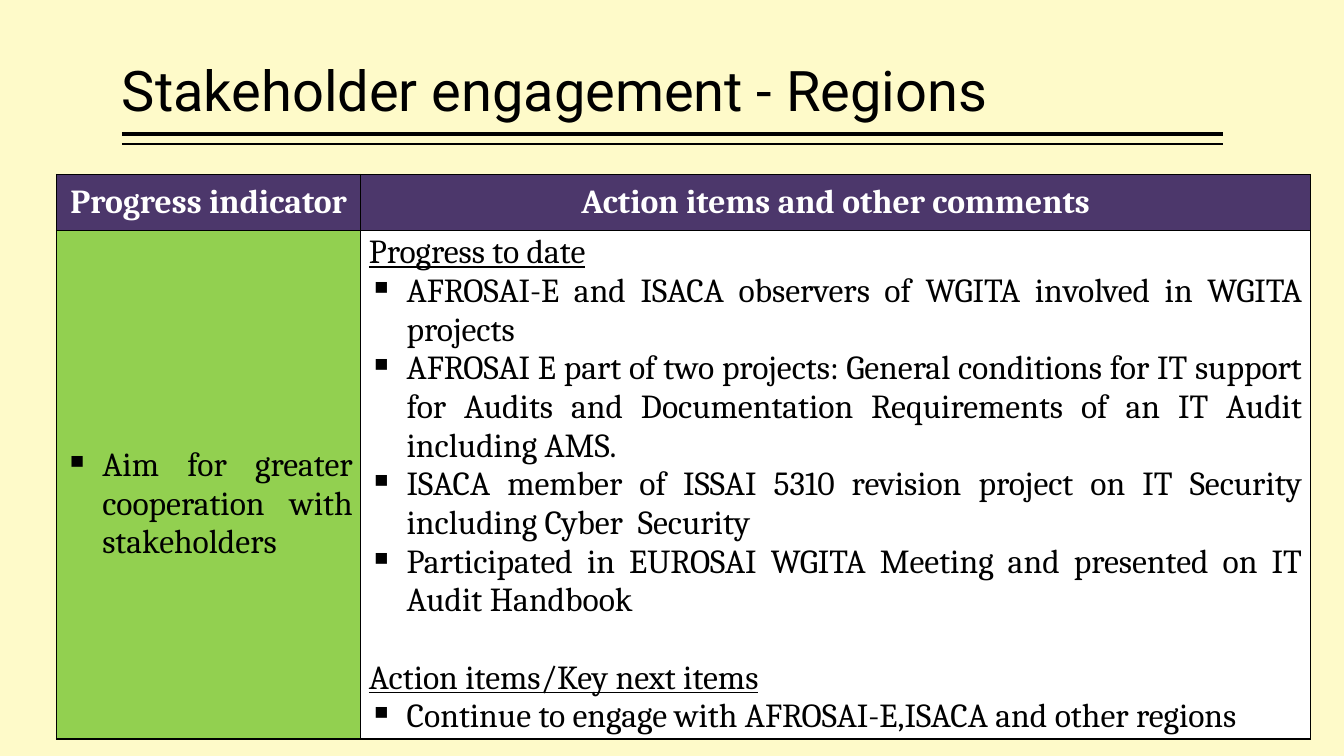
from dataclasses import dataclass
from typing import Any

from lxml import etree
from pptx import Presentation
from pptx.dml.color import RGBColor
from pptx.enum.shapes import MSO_CONNECTOR
from pptx.enum.text import MSO_ANCHOR, MSO_AUTO_SIZE, PP_ALIGN
from pptx.oxml.ns import qn
from pptx.util import Pt

STRAIGHT = MSO_CONNECTOR.STRAIGHT
MIDDLE, BOTTOM = MSO_ANCHOR.MIDDLE, MSO_ANCHOR.BOTTOM
NO_AUTOFIT = MSO_AUTO_SIZE.NONE
LEFT, CENTER, JUSTIFY = PP_ALIGN.LEFT, PP_ALIGN.CENTER, PP_ALIGN.JUSTIFY
TITLE_ONLY = 5


@dataclass(frozen=True)
class Theme:
    background: str = "FEFAC9"
    ink: str = "000000"
    header_ink: str = "FFFFFF"
    header_fill: str = "4C376B"
    indicator_fill: str = "92D050"
    comments_fill: str = "FFFFFF"
    title_font: str = "Roboto"
    table_font: str = "Cambria"
    title_size: float = 40
    table_size: float = 24
    line_height: float = 27.7
    bullet_indent: float = 27


THEME = Theme()


@dataclass(frozen=True)
class Rule:
    y: float
    weight: float


@dataclass(frozen=True)
class Entry:
    text: str
    align: Any = JUSTIFY
    bullet: bool = False
    bold: bool = False
    underline: bool = False
    space_before: float = 0


@dataclass(frozen=True)
class CellSpec:
    row: int
    column: int
    fill: str
    ink: str
    entries: list[Entry]
    top_margin: float = 0


def header(text: str) -> list[Entry]:
    return [Entry(text, align=CENTER, bold=True)]


def bullets(*texts: str) -> list[Entry]:
    return [Entry(text, bullet=True) for text in texts]


TITLE = "Stakeholder engagement - Regions"
RULE_LEFT, RULE_RIGHT = 87.1, 873.4
RULES = [Rule(95.8, 3), Rule(103, 1)]
TABLE_LEFT, TABLE_TOP = 40.3, 124.6
COLUMN_WIDTHS = [217.4, 678.2]
ROW_HEIGHTS = [40.3, 363]

PROGRESS = bullets(
    "AFROSAI-E and ISACA observers of WGITA involved in WGITA projects",
    "AFROSAI E part of two projects: General conditions for IT support for Audits "
    "and Documentation Requirements of an IT Audit including AMS.",
    "ISACA member of ISSAI 5310 revision project on IT Security including Cyber  Security",
    "Participated in EUROSAI WGITA Meeting and presented on IT Audit Handbook",
)
NEXT_ITEMS = bullets("Continue to engage with AFROSAI-E,ISACA and other regions")
COMMENTS = [
    Entry("Progress to date", underline=True),
    *PROGRESS,
    Entry("Action items/Key next items", underline=True, space_before=THEME.line_height),
    *NEXT_ITEMS,
]

CELLS = [
    CellSpec(0, 0, THEME.header_fill, THEME.header_ink, header("Progress indicator")),
    CellSpec(0, 1, THEME.header_fill, THEME.header_ink,
             header("Action items and other comments")),
    CellSpec(1, 0, THEME.indicator_fill, THEME.ink,
             bullets("Aim for greater cooperation with stakeholders"),
             top_margin=THEME.line_height),
    CellSpec(1, 1, THEME.comments_fill, THEME.ink, COMMENTS),
]


def apply(target: Any, values: dict[str, Any]) -> None:
    """Set each named attribute on the target."""
    for name, value in values.items():
        setattr(target, name, value)


def add_title(slide: Any) -> None:
    title = slide.shapes.title
    apply(title, {"left": Pt(87.1), "top": Pt(31), "width": Pt(661), "height": Pt(61.2)})
    frame = title.text_frame
    frame.text = TITLE
    apply(frame, {"margin_left": 0, "margin_right": 0, "margin_top": Pt(3.6),
                  "margin_bottom": Pt(3.6), "vertical_anchor": BOTTOM,
                  "word_wrap": True, "auto_size": NO_AUTOFIT})
    paragraph = frame.paragraphs[0]
    apply(paragraph, {"alignment": LEFT, "line_spacing": 0.9})
    font = paragraph.runs[0].font
    apply(font, {"name": THEME.title_font, "size": Pt(THEME.title_size), "bold": False})
    font.color.rgb = RGBColor.from_string(THEME.ink)


def add_rule(slide: Any, rule: Rule) -> None:
    connector = slide.shapes.add_connector(
        STRAIGHT, Pt(RULE_LEFT), Pt(rule.y), Pt(RULE_RIGHT), Pt(rule.y))
    connector.line.width = Pt(rule.weight)
    connector.line.color.rgb = RGBColor.from_string(THEME.ink)
    etree.SubElement(connector.element.spPr, qn("a:effectLst"))


def add_bullet(paragraph: Any) -> None:
    properties = paragraph._p.get_or_add_pPr()
    indent = Pt(THEME.bullet_indent)
    properties.set("marL", str(indent))
    properties.set("indent", str(-indent))
    etree.SubElement(properties, qn("a:buChar"), char="▪")


def write_entry(paragraph: Any, entry: Entry, ink: str) -> None:
    if entry.bullet:
        add_bullet(paragraph)
    apply(paragraph, {"alignment": entry.align, "space_before": Pt(entry.space_before)})
    run = paragraph.add_run()
    run.text = entry.text
    apply(run.font, {"name": THEME.table_font, "size": Pt(THEME.table_size),
                     "bold": entry.bold, "underline": entry.underline})
    run.font.color.rgb = RGBColor.from_string(ink)


def add_borders(cell: Any) -> None:
    properties = cell._tc.get_or_add_tcPr()
    for position, side in enumerate(("lnL", "lnR", "lnT", "lnB")):
        border = etree.Element(qn(f"a:{side}"), w=str(Pt(1)))
        fill = etree.SubElement(border, qn("a:solidFill"))
        etree.SubElement(fill, qn("a:srgbClr"), val=THEME.ink)
        properties.insert(position, border)


def fill_cell(cell: Any, spec: CellSpec) -> None:
    apply(cell, {"margin_left": Pt(5.8), "margin_right": Pt(5.8),
                 "margin_top": Pt(spec.top_margin), "margin_bottom": 0,
                 "vertical_anchor": MIDDLE})
    cell.fill.solid()
    cell.fill.fore_color.rgb = RGBColor.from_string(spec.fill)
    add_borders(cell)
    frame = cell.text_frame
    for index, entry in enumerate(spec.entries):
        paragraph = frame.add_paragraph() if index else frame.paragraphs[0]
        write_entry(paragraph, entry, spec.ink)


def add_progress_table(slide: Any) -> None:
    table = slide.shapes.add_table(
        len(ROW_HEIGHTS), len(COLUMN_WIDTHS), Pt(TABLE_LEFT), Pt(TABLE_TOP),
        Pt(sum(COLUMN_WIDTHS)), Pt(sum(ROW_HEIGHTS))).table
    table.horz_banding = False
    for column, width in zip(table.columns, COLUMN_WIDTHS):
        column.width = Pt(width)
    for row, height in zip(table.rows, ROW_HEIGHTS):
        row.height = Pt(height)
    for spec in CELLS:
        fill_cell(table.cell(spec.row, spec.column), spec)


def main() -> None:
    deck = Presentation()
    apply(deck, {"slide_width": Pt(960), "slide_height": Pt(540)})
    slide = deck.slides.add_slide(deck.slide_layouts[TITLE_ONLY])
    slide.background.fill.solid()
    slide.background.fill.fore_color.rgb = RGBColor.from_string(THEME.background)
    for rule in RULES:
        add_rule(slide, rule)
    add_title(slide)
    add_progress_table(slide)
    deck.save("out.pptx")


if __name__ == "__main__":
    main()
